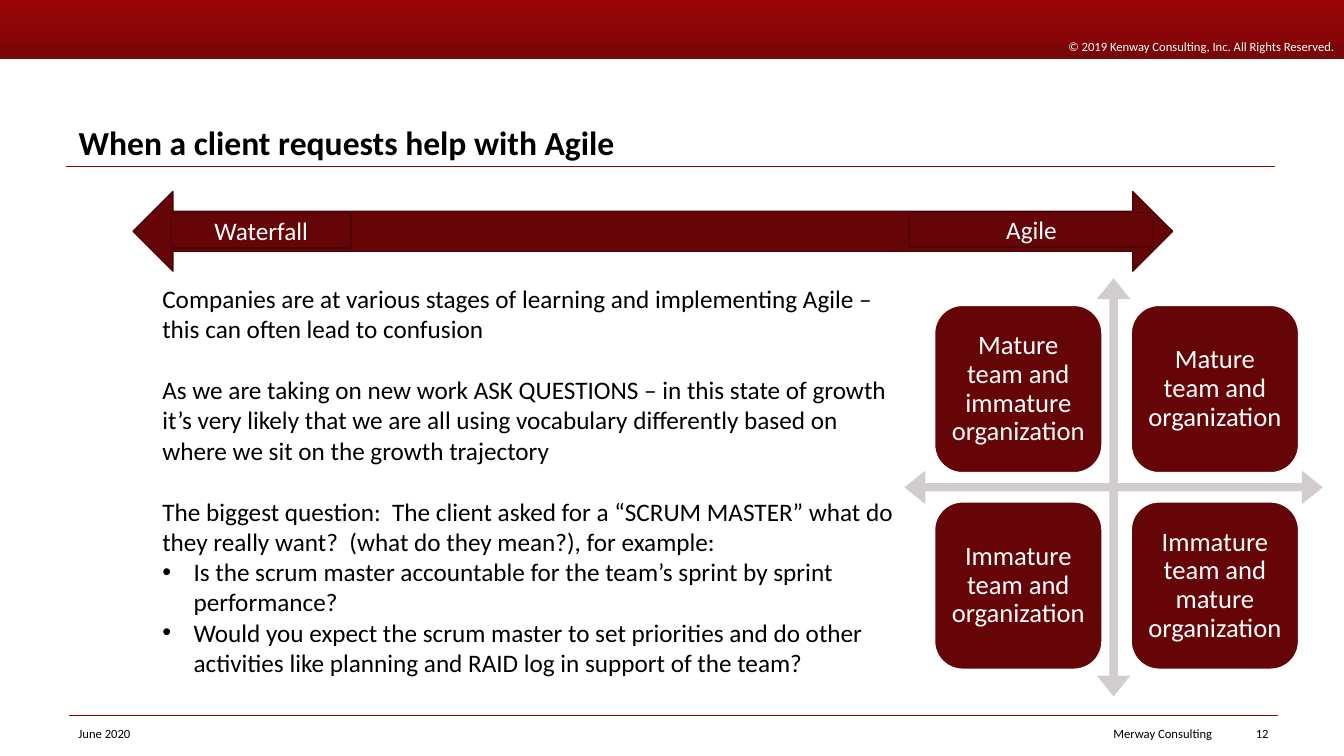
from dataclasses import dataclass

from lxml import etree
from pptx import Presentation
from pptx.dml.color import RGBColor
from pptx.enum.shapes import MSO_CONNECTOR, MSO_SHAPE
from pptx.enum.text import MSO_ANCHOR, MSO_AUTO_SIZE, PP_ALIGN
from pptx.oxml.ns import qn
from pptx.util import Inches, Pt

LEFT, CENTER, RIGHT = PP_ALIGN.LEFT, PP_ALIGN.CENTER, PP_ALIGN.RIGHT
TOP, MIDDLE, BOTTOM = MSO_ANCHOR.TOP, MSO_ANCHOR.MIDDLE, MSO_ANCHOR.BOTTOM
NO_AUTOFIT = MSO_AUTO_SIZE.NONE
STRAIGHT = MSO_CONNECTOR.STRAIGHT
RECTANGLE, ROUNDED = MSO_SHAPE.RECTANGLE, MSO_SHAPE.ROUNDED_RECTANGLE
SPECTRUM_ARROW, AXES_ARROW = MSO_SHAPE.LEFT_RIGHT_ARROW, MSO_SHAPE.QUAD_ARROW


@dataclass(frozen=True)
class Theme:
    font: str = "Calibri"
    black: str = "000000"
    white: str = "FFFFFF"
    maroon: str = "660507"
    edge: str = "4B0405"
    rule: str = "900507"
    axes: str = "D3CCCC"
    banner: tuple = ((0, "9B0507"), (35, "900507"), (65, "870507"), (91, "780507"))
    title_size: int = 24
    body_size: int = 18
    card_size: int = 19
    small_size: int = 9


THEME = Theme()

BODY = (
    ("Companies are at various stages of learning and implementing Agile – "
     "this can often lead to confusion", False),
    ("As we are taking on new work ASK QUESTIONS – in this state of growth "
     "it’s very likely that we are all using vocabulary differently based on "
     "where we sit on the growth trajectory", False),
    ("The biggest question:  The client asked for a “SCRUM MASTER” what do "
     "they really want?  (what do they mean?), for example:", False),
    ("Is the scrum master accountable for the team’s sprint by sprint performance?", True),
    ("Would you expect the scrum master to set priorities and do other "
     "activities like planning and RAID log in support of the team?", True),
)
CARDS = (
    ("Mature team and immature organization", "Mature team and organization"),
    ("Immature team and organization", "Immature team and mature organization"),
)


def place(shape, box):
    shape.left, shape.top, shape.width, shape.height = (Inches(length) for length in box)


def style_paragraph(paragraph, size, color, align=LEFT, bold=False):
    paragraph.alignment = align
    font = paragraph.font
    font.name, font.size, font.bold = THEME.font, Pt(size), bold
    font.color.rgb = RGBColor.from_string(color)


def write(shape, text, size, color, align=LEFT, anchor=MIDDLE, bold=False):
    frame = shape.text_frame
    frame.word_wrap = True
    frame.auto_size = NO_AUTOFIT
    frame.vertical_anchor = anchor
    frame.text = text
    style_paragraph(frame.paragraphs[0], size, color, align, bold)
    return frame


def add_shape(slide, kind, box, fill=None, line=None):
    shape = slide.shapes.add_shape(kind, *(Inches(length) for length in box))
    shape.shadow.inherit = False
    if fill:
        shape.fill.solid()
        shape.fill.fore_color.rgb = RGBColor.from_string(fill)
    if line:
        shape.line.color.rgb = RGBColor.from_string(line)
        shape.line.width = Pt(1)
    else:
        shape.line.fill.background()
    return shape


def add_rule(slide, left, top, width):
    rule = slide.shapes.add_connector(
        STRAIGHT, Inches(left), Inches(top), Inches(left + width), Inches(top))
    rule.line.color.rgb = RGBColor.from_string(THEME.rule)
    rule.line.width = Pt(0.5)
    etree.SubElement(rule._element.spPr, qn("a:effectLst"))


def add_banner(slide, box):
    banner = add_shape(slide, RECTANGLE, box)
    banner.fill.gradient()
    banner.fill.gradient_angle = 270
    stops = next(banner._element.spPr.iter(qn("a:gsLst")))
    for stop in list(stops):
        stops.remove(stop)
    for percent, color in THEME.banner:
        stop = etree.SubElement(stops, qn("a:gs"), pos=str(percent * 1000))
        etree.SubElement(stop, qn("a:srgbClr"), val=color)
    write(banner, "© 2019 Kenway Consulting, Inc. All Rights Reserved.",
          THEME.small_size, THEME.white, RIGHT, BOTTOM)


def add_title(slide, box):
    left, top, width, height = box
    title = slide.shapes.title
    place(title, box)
    frame = write(title, "When a client requests help with Agile",
                  THEME.title_size, THEME.black, LEFT, BOTTOM, True)
    frame.paragraphs[0].line_spacing = 0.9
    add_rule(slide, left - 0.03, top + height - 0.01, width)


def set_bullet(paragraph, bulleted):
    properties = paragraph._p.get_or_add_pPr()
    indent = Inches(0.31) if bulleted else 0
    properties.set("marL", str(indent))
    properties.set("indent", str(-indent))
    if bulleted:
        etree.SubElement(properties, qn("a:buFont"), typeface="Arial")
        etree.SubElement(properties, qn("a:buChar"), char="•")
    else:
        etree.SubElement(properties, qn("a:buNone"))


def add_body(slide, box):
    body = slide.placeholders[1]
    place(body, box)
    frame = body.text_frame
    frame.word_wrap = True
    frame.auto_size = NO_AUTOFIT
    frame.vertical_anchor = TOP
    for index, (text, bulleted) in enumerate(BODY):
        paragraph = frame.add_paragraph() if index else frame.paragraphs[0]
        paragraph.text = text
        set_bullet(paragraph, bulleted)
        paragraph.space_before = Pt(22 if index and not bulleted else 0)
        style_paragraph(paragraph, THEME.body_size, THEME.black)


def add_spectrum(slide, box):
    left, top, width, height = box
    add_shape(slide, SPECTRUM_ARROW, box, THEME.maroon, THEME.edge)
    for text, offset, drop, label_width in (
            ("Waterfall", 0.38, 0.22, 1.78), ("Agile", width - 2.61, 0.21, 2.42)):
        label = add_shape(slide, RECTANGLE, (left + offset, top + drop, label_width, 0.34),
                          THEME.maroon, THEME.edge)
        write(label, text, THEME.body_size, THEME.white, CENTER)


def add_matrix(slide, box):
    left, top, width, height = box
    axes = add_shape(slide, AXES_ARROW, box, THEME.axes)
    for index, value in enumerate((0.02, 0.04, 0.05)):
        axes.adjustments[index] = value
    card_size, inset, step = 1.66, 0.27, 1.95
    for row, texts in enumerate(CARDS):
        for column, text in enumerate(texts):
            card = add_shape(slide, ROUNDED,
                             (left + inset + 0.03 + column * step, top + inset + row * step,
                              card_size, card_size), THEME.maroon, THEME.white)
            frame = write(card, text, THEME.card_size, THEME.white, CENTER)
            frame.margin_left = frame.margin_right = Inches(0.08)
            frame.margin_top = frame.margin_bottom = Inches(0.08)
            frame.paragraphs[0].line_spacing = 0.9


def add_footer(slide, box):
    left, top, width, height = box
    add_rule(slide, left, top, width)
    for text, offset, text_width, align in (
            ("June 2020", 0, 3, LEFT),
            ("Merway Consulting", 6.94, 4.5, RIGHT),
            ("12", width - 0.55, 0.55, RIGHT)):
        label = slide.shapes.add_textbox(
            Inches(left + offset), Inches(top + 0.04), Inches(text_width), Inches(height - 0.04))
        write(label, text, THEME.small_size, THEME.black, align)


def main():
    presentation = Presentation()
    presentation.slide_width, presentation.slide_height = Inches(13.33), Inches(7.5)
    slide = presentation.slides.add_slide(presentation.slide_layouts[1])
    add_banner(slide, (0, 0, 13.33, 0.59))
    add_title(slide, (0.68, 0.87, 12, 0.79))
    add_body(slide, (1.51, 2.76, 7.51, 4.1))
    add_spectrum(slide, (1.32, 1.9, 10.31, 0.79))
    add_matrix(slide, (8.97, 2.76, 4.15, 4.15))
    add_footer(slide, (0.68, 7.1, 12, 0.32))
    presentation.save("out.pptx")


if __name__ == "__main__":
    main()
